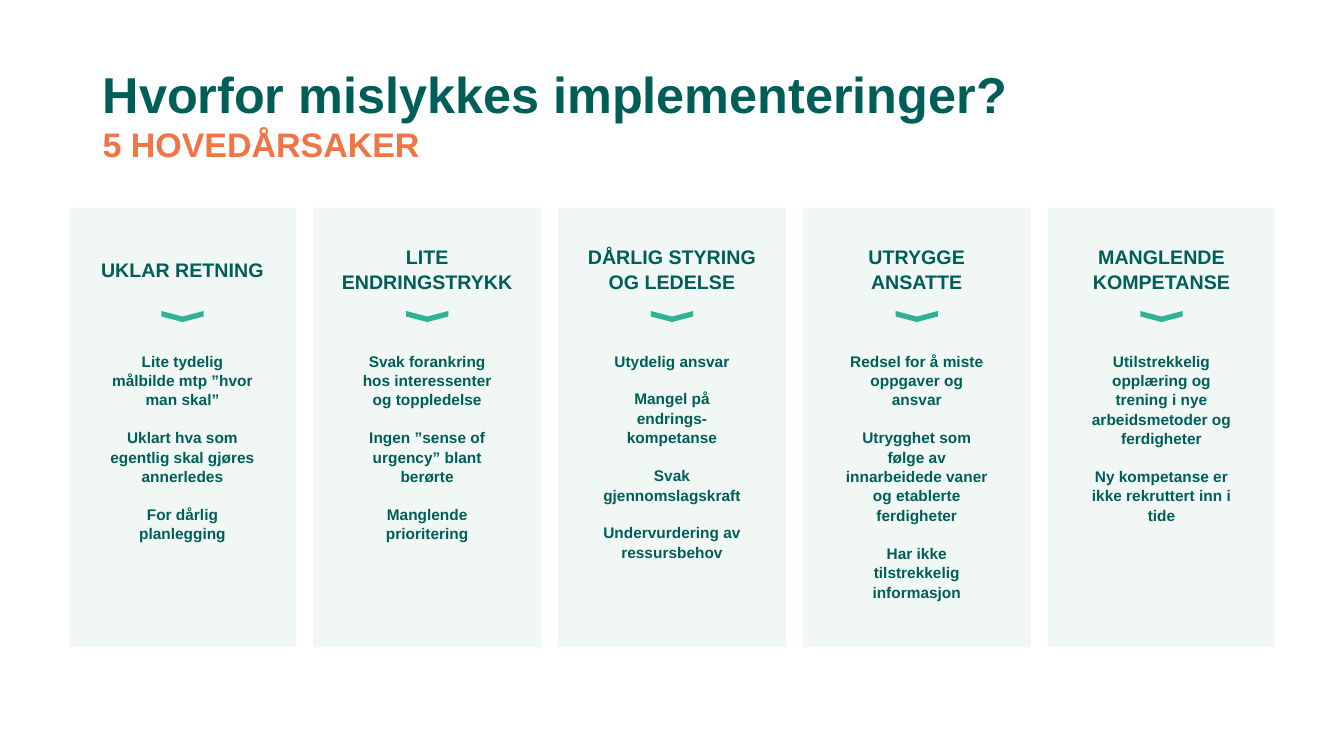
from dataclasses import dataclass

from pptx import Presentation
from pptx.dml.color import RGBColor
from pptx.enum.shapes import MSO_SHAPE
from pptx.enum.text import MSO_ANCHOR, PP_ALIGN
from pptx.util import Inches, Pt

RECT, CHEVRON = MSO_SHAPE.RECTANGLE, MSO_SHAPE.CHEVRON
TOP, MIDDLE = MSO_ANCHOR.TOP, MSO_ANCHOR.MIDDLE
LEFT, CENTER = PP_ALIGN.LEFT, PP_ALIGN.CENTER


@dataclass(frozen=True)
class Theme:
    font: str = "Arial"
    dark: str = "005E58"
    accent: str = "EF7545"
    mint: str = "30B393"
    card: str = "F1F7F5"
    title: float = 36
    subtitle: float = 24.3
    heading: float = 14
    body: float = 11
    spacing: float = 1.05
    gap: float = 13.2


# Heading, body width, causes
CARDS = [
    ("UKLAR RETNING", 1.64, [
        "Lite tydelig målbilde mtp ”hvor man skal”",
        "Uklart hva som egentlig skal gjøres annerledes",
        "For dårlig planlegging"]),
    ("LITE ENDRINGSTRYKK", 1.64, [
        "Svak forankring hos interessenter og toppledelse",
        "Ingen ”sense of urgency” blant berørte",
        "Manglende prioritering"]),
    ("DÅRLIG STYRING OG LEDELSE", 1.62, [
        "Utydelig ansvar",
        "Mangel på endrings-kompetanse",
        "Svak gjennomslagskraft",
        "Undervurdering av ressursbehov"]),
    ("UTRYGGE ANSATTE", 1.62, [
        "Redsel for å miste oppgaver og ansvar",
        "Utrygghet som følge av innarbeidede vaner og etablerte ferdigheter",
        "Har ikke tilstrekkelig informasjon"]),
    ("MANGLENDE KOMPETANSE", 1.62, [
        "Utilstrekkelig opplæring og trening i nye arbeidsmetoder og ferdigheter",
        "Ny kompetanse er ikke rekruttert inn i tide"]),
]
CARD_LEFT, CARD_TOP, CARD_WIDTH, CARD_HEIGHT = 0.68, 2.06, 2.26, 4.36
CARD_STEP = (10.39 - CARD_LEFT) / (len(CARDS) - 1)


def add_text(p, text, *, size, color, font, bold=True):
    """Append one formatted run to a paragraph."""
    r = p.add_run()
    r.text = text
    r.font.name, r.font.size, r.font.bold = font, Pt(size), bold
    r.font.color.rgb = RGBColor.from_string(color)


class SlideBuilder:
    def __init__(self, slide, theme):
        self.s, self.theme = slide, theme

    def shape(self, kind, x, y, w, h, fill, rotation=0):
        sp = self.s.shapes.add_shape(kind, Inches(x), Inches(y), Inches(w), Inches(h))
        sp.shadow.inherit = False
        sp.fill.solid()
        sp.fill.fore_color.rgb = RGBColor.from_string(fill)
        sp.line.fill.background()
        sp.rotation = rotation

    def text(self, x, y, w, h, paragraphs, size, *, align=CENTER, anchor=TOP):
        tf = self.text_frame(x, y, w, h, anchor)
        for i, text in enumerate(paragraphs):
            p = tf.add_paragraph() if i else tf.paragraphs[0]
            p.alignment, p.line_spacing = align, self.theme.spacing
            if i:
                p.space_before = Pt(self.theme.gap)
            add_text(p, text, size=size, color=self.theme.dark, font=self.theme.font)

    def text_frame(self, x, y, w, h, anchor):
        sp = self.s.shapes.add_textbox(Inches(x), Inches(y), Inches(w), Inches(h))
        tf = sp.text_frame
        tf.word_wrap, tf.vertical_anchor = True, anchor
        return tf

    def title(self, title, subtitle):
        t = self.theme
        p = self.text_frame(0.92, 0.66, 11.5, 0.93, MIDDLE).paragraphs[0]
        p.alignment, p.line_spacing = LEFT, 1.0
        add_text(p, title, size=t.title, color=t.dark, font=t.font)
        p.add_line_break()
        add_text(p, subtitle, size=t.subtitle, color=t.accent, font=t.font)

    def card(self, x, heading, body_width, causes):
        t = self.theme
        center = x + CARD_WIDTH / 2
        self.shape(RECT, x, CARD_TOP, CARD_WIDTH, CARD_HEIGHT, t.card)
        self.shape(CHEVRON, center - 0.055, 2.93, 0.11, 0.42, t.mint, rotation=90)
        self.text(center - 0.98, 2.38, 1.96, 0.57, [heading], t.heading, anchor=MIDDLE)
        self.text(center - body_width / 2, 3.43, body_width, 2.51, causes, t.body)


def main():
    prs = Presentation()
    prs.slide_width, prs.slide_height = Inches(13.33), Inches(7.5)
    builder = SlideBuilder(prs.slides.add_slide(prs.slide_layouts[6]), Theme())

    # Title and subtitle
    builder.title("Hvorfor mislykkes implementeringer?", "5 HOVEDÅRSAKER")

    # One card for each cause
    for i, (heading, body_width, causes) in enumerate(CARDS):
        builder.card(CARD_LEFT + i * CARD_STEP, heading, body_width, causes)

    prs.save("out.pptx")


if __name__ == "__main__":
    main()
